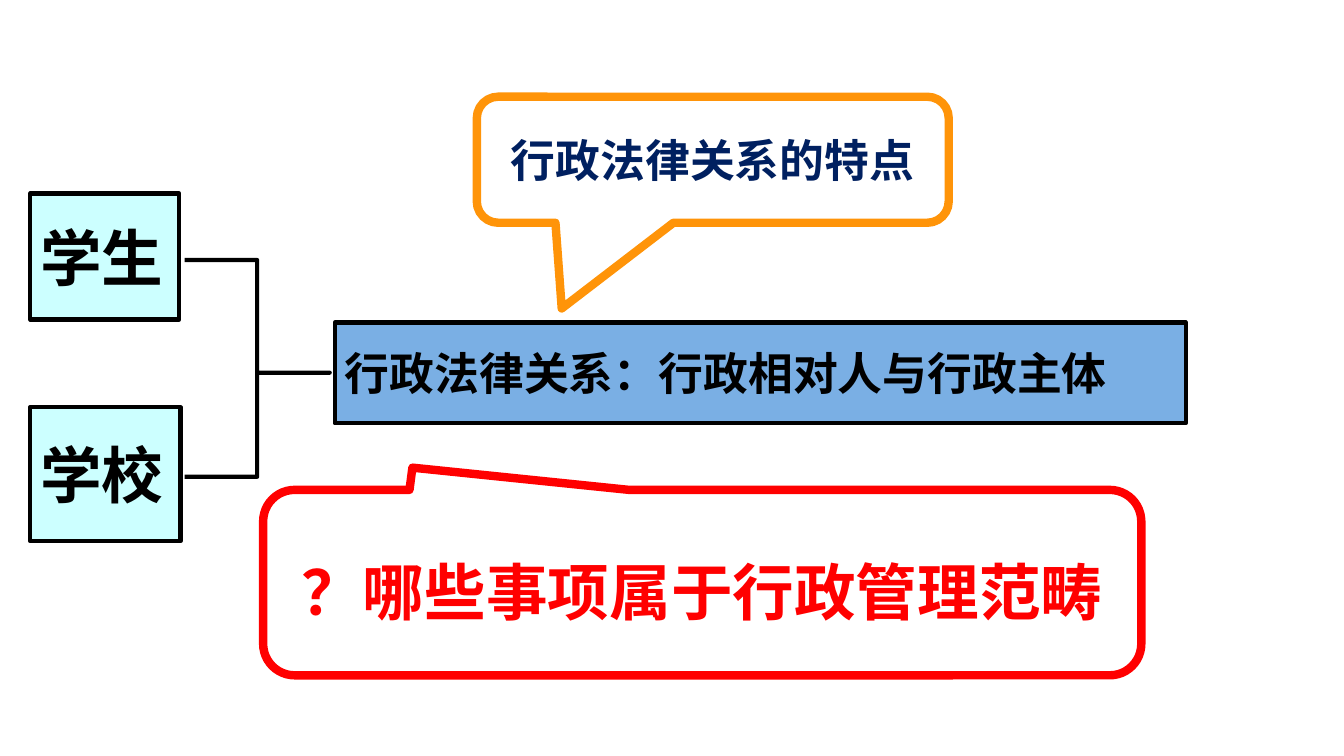
from dataclasses import dataclass
from typing import Optional

from lxml.etree import SubElement
from pptx import Presentation
from pptx.dml.color import RGBColor
from pptx.enum.shapes import MSO_SHAPE as Shape
from pptx.enum.text import MSO_ANCHOR as Anchor, PP_ALIGN as Align
from pptx.oxml.ns import qn
from pptx.util import Inches, Pt

FONT = "Noto Sans CJK SC"
WIDTH, HEIGHT = Inches(13.33), Inches(7.5)


@dataclass
class Box:
    """A shape placed in percent of the slide's width and height."""
    kind: Shape
    left: float
    top: float
    width: float
    height: float
    text: str = ""
    size: int = 44
    color: str = "000000"
    align: Align = Align.LEFT
    fill: Optional[str] = None
    opacity: int = 100
    line: str = "000000"
    weight: int = 3
    adjust: tuple[float, ...] = ()
    inset_top: float = 0.05


BOXES = [
    Box(Shape.RECTANGLE, 2.25, 25.6, 11.1, 16.67, "学生", fill="CCFFFF"),
    Box(Shape.RECTANGLE, 2.25, 53.87, 11.18, 17.73, "学校", fill="CCFFFF"),
    Box(Shape.RIGHT_BRACE, 13.73, 34.4, 10.8, 28.67, adjust=(0, 0.52)),
    Box(Shape.RECTANGLE, 24.91, 42.67, 63.32, 13.33, "行政法律关系：行政相对人与行政主体",
        size=32, fill="0066CC", opacity=52),
    Box(Shape.ROUNDED_RECTANGULAR_CALLOUT, 35.48, 12.8, 35.11, 16.67, "行政法律关系的特点",
        size=32, color="002060", align=Align.CENTER, line="FF9409", weight=6,
        adjust=(-0.32, 1.18, 0.17)),
    Box(Shape.ROUNDED_RECTANGULAR_CALLOUT, 19.58, 64.8, 65.34, 24.53, "？哪些事项属于行政管理范畴",
        color="FF0000", align=Align.CENTER, fill="FFFFFF", line="FF0000", weight=6,
        adjust=(-0.33, -0.62, 0.17), inset_top=0.21),
]


def rgb(color: str) -> RGBColor:
    """Turn a hex string into a colour."""
    return RGBColor.from_string(color)


def paint(s, box: Box) -> None:
    """Set the fill and outline of a shape."""
    s.shadow.inherit = False
    s.line.color.rgb = rgb(box.line)
    s.line.width = Pt(box.weight)
    if box.fill is None:
        s.fill.background()
        return
    s.fill.solid()
    s.fill.fore_color.rgb = rgb(box.fill)
    if box.opacity < 100:
        clr = s._element.spPr.find(qn("a:solidFill")).find(qn("a:srgbClr"))
        SubElement(clr, qn("a:alpha")).set("val", str(box.opacity * 1000))


def write(s, box: Box) -> None:
    """Write the text of a shape."""
    tf = s.text_frame
    tf.word_wrap = True
    tf.vertical_anchor = Anchor.MIDDLE
    tf.margin_top = Inches(box.inset_top)
    p = tf.paragraphs[0]
    p.alignment = box.align
    r = p.add_run()
    r.text = box.text
    r.font.size = Pt(box.size)
    r.font.bold = True
    r.font.color.rgb = rgb(box.color)
    r.font.name = FONT
    SubElement(r.font._element, qn("a:ea")).set("typeface", FONT)


def draw(slide, box: Box) -> None:
    """Add one box to the slide."""
    s = slide.shapes.add_shape(
        box.kind, int(WIDTH * box.left / 100), int(HEIGHT * box.top / 100),
        int(WIDTH * box.width / 100), int(HEIGHT * box.height / 100))
    for i, value in enumerate(box.adjust):
        s.adjustments[i] = value
    paint(s, box)
    if box.text:
        write(s, box)


def main() -> None:
    """Build and save the slide."""
    prs = Presentation()
    prs.slide_width, prs.slide_height = WIDTH, HEIGHT
    slide = prs.slides.add_slide(prs.slide_layouts[6])
    for box in BOXES:
        draw(slide, box)
    prs.save("out.pptx")


if __name__ == "__main__":
    main()
